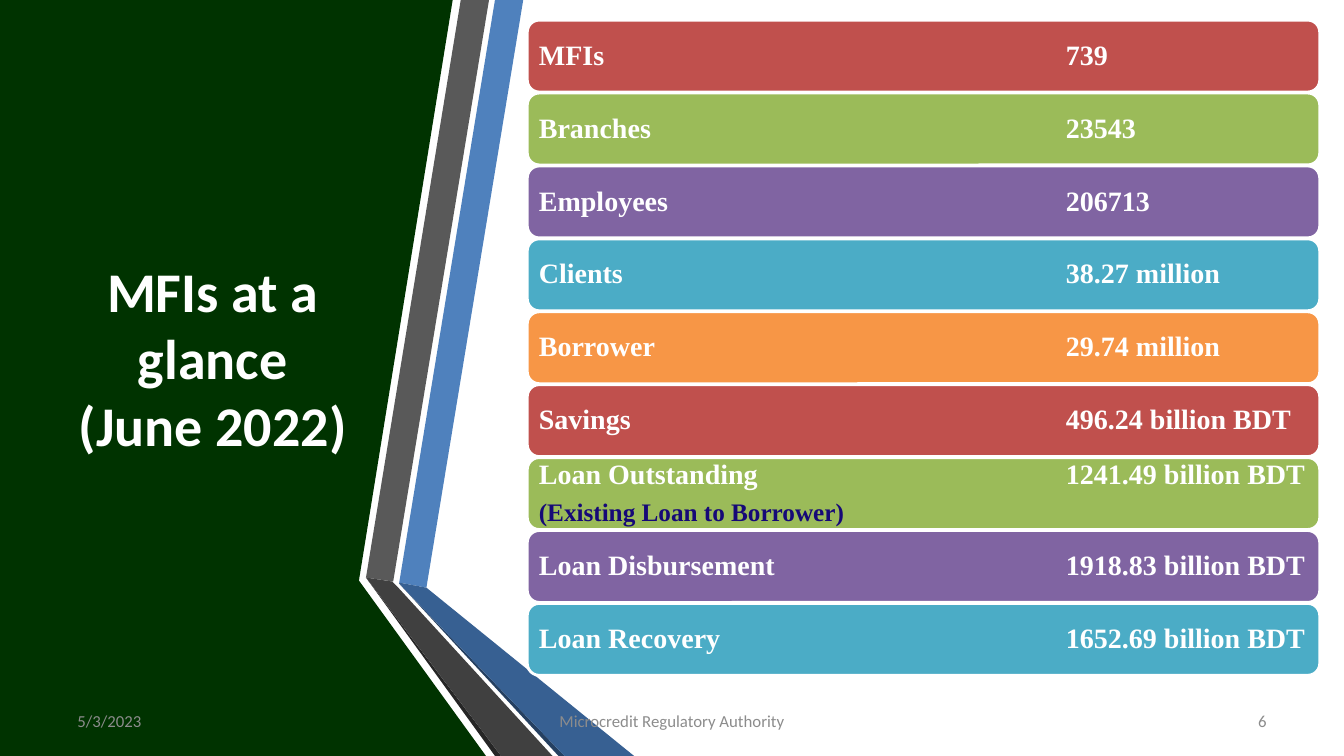
from lxml.etree import SubElement
from pptx import Presentation
from pptx.dml.color import RGBColor
from pptx.enum.shapes import MSO_SHAPE as Shape
from pptx.enum.text import MSO_ANCHOR as Anchor, PP_ALIGN as Align
from pptx.oxml.ns import qn
from pptx.util import Inches, Pt

WIDTH, HEIGHT = 13.33, 7.5

WHITE = RGBColor(0xFF, 0xFF, 0xFF)
DARK_GREEN = RGBColor(0x00, 0x33, 0x00)
BLUE = RGBColor(0x4F, 0x81, 0xBD)
BLUE_FOLD = RGBColor(0x37, 0x60, 0x92)
BLUE_EDGE = RGBColor(0x25, 0x40, 0x61)
GRAY = RGBColor(0x59, 0x59, 0x59)
GRAY_FOLD = RGBColor(0x40, 0x40, 0x40)
GRAY_EDGE = RGBColor(0x26, 0x26, 0x26)
FOOTER_GRAY = RGBColor(0x8C, 0x8C, 0x8C)
NOTE_BLUE = RGBColor(0x16, 0x09, 0x77)
BAR_COLORS = [
    RGBColor(0xC0, 0x50, 0x4D),
    RGBColor(0x9B, 0xBB, 0x59),
    RGBColor(0x80, 0x64, 0xA2),
    RGBColor(0x4B, 0xAC, 0xC6),
    RGBColor(0xF7, 0x96, 0x46),
]

FIGURES = [
    ("MFIs", "739", None),
    ("Branches", "23543", None),
    ("Employees", "206713", None),
    ("Clients", "38.27 million", None),
    ("Borrower", "29.74 million", None),
    ("Savings", "496.24 billion BDT", None),
    ("Loan Outstanding", "1241.49 billion BDT", "(Existing Loan to Borrower)"),
    ("Loan Disbursement", "1918.83 billion BDT", None),
    ("Loan Recovery", "1652.69 billion BDT", None),
]


def write(paragraph, text, size, color, font="Calibri", bold=False,
          align=Align.LEFT, spacing=None, after=None, tab=None):
    paragraph.text = text
    paragraph.alignment = align
    if spacing:
        paragraph.line_spacing = spacing
    if after:
        paragraph.space_after = Pt(after)
    if tab:
        stops = SubElement(paragraph._p.get_or_add_pPr(), qn("a:tabLst"))
        SubElement(stops, qn("a:tab"), pos=str(Inches(tab)), algn="l")
    for run in paragraph.runs:
        run.font.name = font
        run.font.size = Pt(size)
        run.font.bold = bold
        run.font.color.rgb = color


def add_label(slide, box, text, **style):
    frame = slide.shapes.add_textbox(*map(Inches, box)).text_frame
    frame.word_wrap = True
    frame.vertical_anchor = Anchor.MIDDLE
    write(frame.paragraphs[0], text, **style)


def add_polygon(shapes, points, color):
    start, *rest = [(Inches(x), Inches(y)) for x, y in points]
    builder = shapes.build_freeform(*start)
    builder.add_line_segments(rest, close=True)
    polygon = builder.convert_to_shape()
    polygon.shadow.inherit = False
    polygon.fill.solid()
    polygon.fill.fore_color.rgb = color
    polygon.line.fill.background()


def add_title_panel(slide, box):
    left, top, width, height = box
    right, bottom = left + width, top + height
    add_polygon(slide.shapes, [(left, top), (right - 0.33, top), (right - 1.26, 5.76),
                               (right, bottom), (left, bottom)], DARK_GREEN)


def add_ribbons(slide, top, bottom):
    ribbons = slide.shapes.add_group_shape().shapes
    # Upper bands
    add_polygon(ribbons, [(3.96, 5.78), (4.23, 5.83), (5.19, top), (4.91, top)], BLUE)
    add_polygon(ribbons, [(4.85, top), (4.57, top), (3.63, 5.73), (3.9, 5.77)], GRAY)
    # Thin dark edges
    add_polygon(ribbons, [(3.63, 5.73), (4.91, bottom), (4.97, bottom)], GRAY_EDGE)
    add_polygon(ribbons, [(3.96, 5.79), (5.54, bottom), (5.6, bottom)], BLUE_EDGE)
    # Folded lower bands
    add_polygon(ribbons, [(3.96, 5.79), (5.6, bottom), (6.29, bottom), (4.23, 5.83),
                          (3.96, 5.78)], BLUE_FOLD)
    add_polygon(ribbons, [(5.48, bottom), (3.95, 5.83), (3.89, 5.77), (3.63, 5.73),
                          (4.97, bottom)], GRAY_FOLD)


def add_figure_bars(slide, box):
    left, top, width, height = box
    pitch = height / len(FIGURES)
    for row, (name, value, note) in enumerate(FIGURES):
        bar = slide.shapes.add_shape(
            Shape.ROUNDED_RECTANGLE, Inches(left), Inches(top + row * pitch),
            Inches(width), Inches(pitch - 0.01))
        bar.shadow.inherit = False
        bar.fill.solid()
        bar.fill.fore_color.rgb = BAR_COLORS[row % len(BAR_COLORS)]
        bar.line.color.rgb = WHITE
        bar.line.width = Pt(2)

        frame = bar.text_frame
        frame.word_wrap = True
        frame.vertical_anchor = Anchor.MIDDLE
        frame.margin_left = frame.margin_right = Inches(0.08)
        frame.margin_top = frame.margin_bottom = Inches(0.08)
        style = dict(font="Times New Roman", bold=True, spacing=0.9, after=7)
        write(frame.paragraphs[0], f"{name}\t{value}", size=20, color=WHITE,
              tab=width * 0.665, **style)
        if note:
            write(frame.add_paragraph(), note, size=18, color=NOTE_BLUE, **style)


def add_footer(slide, box):
    left, top, width, height = box
    side, middle = 3.11, 4.22
    style = dict(size=12, color=FOOTER_GRAY)
    add_label(slide, (left, top, side, height), "5/3/2023", **style)
    add_label(slide, (left + (width - middle) / 2, top, middle, height),
              "Microcredit Regulatory Authority", align=Align.CENTER, **style)
    add_label(slide, (left + width - side, top, side, height), "6",
              align=Align.RIGHT, **style)


def main():
    deck = Presentation()
    deck.slide_width, deck.slide_height = Inches(WIDTH), Inches(HEIGHT)
    slide = deck.slides.add_slide(deck.slide_layouts[6])

    add_title_panel(slide, (0, 0, 4.82, HEIGHT))
    add_ribbons(slide, 0, HEIGHT)
    add_label(slide, (0.59, 0.75, 3.04, 5.58), "MFIs at a glance\v(June 2022)",
              size=40, color=WHITE, bold=True, align=Align.CENTER)
    add_figure_bars(slide, (5.23, 0.2, 7.86, 6.51))
    add_footer(slide, (0.67, 6.95, WIDTH - 2 * 0.67, 0.4))

    deck.save("out.pptx")


if __name__ == "__main__":
    main()
